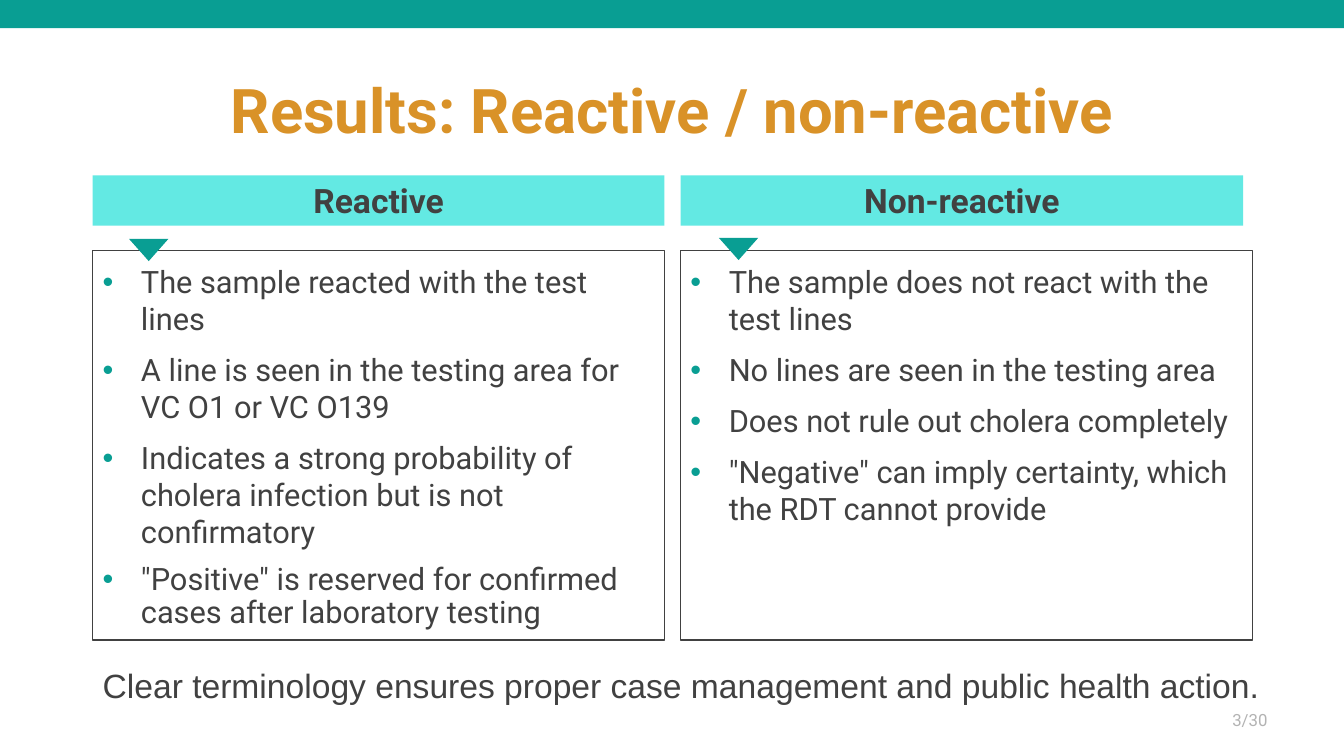
from dataclasses import dataclass

from lxml.etree import SubElement
from pptx import Presentation
from pptx.dml.color import RGBColor
from pptx.enum.shapes import MSO_SHAPE
from pptx.enum.text import MSO_ANCHOR, PP_ALIGN
from pptx.oxml.ns import qn
from pptx.util import Inches, Pt


@dataclass(frozen=True)
class Theme:
    teal: str = "099E93"
    aqua: str = "63E9E3"
    orange: str = "D99228"
    ink: str = "414141"
    grey: str = "B3B3B3"
    font: str = "Roboto"
    closing_font: str = "Arial"
    title_size: int = 44
    heading_size: int = 24
    body_size: int = 22
    number_size: int = 12


THEME = Theme()
BULLET_INDENT = 0.38
REACTIVE = [
    "The sample reacted with the test lines",
    "A line is seen in the testing area for VC O1 or VC O139",
    "Indicates a strong probability of cholera infection but is not confirmatory",
    '"Positive" is reserved for confirmed cases after laboratory testing',
]
NON_REACTIVE = [
    "The sample does not react with the test lines",
    "No lines are seen in the testing area",
    "Does not rule out cholera completely",
    '"Negative" can imply certainty, which the RDT cannot provide',
]


def add_bullet(paragraph):
    properties = paragraph._p.get_or_add_pPr()
    properties.set("marL", str(Inches(BULLET_INDENT)))
    properties.set("indent", str(-Inches(BULLET_INDENT)))
    color = SubElement(properties, qn("a:buClr"))
    SubElement(color, qn("a:srgbClr"), val=THEME.teal)
    SubElement(properties, qn("a:buFont"), typeface="Arial")
    SubElement(properties, qn("a:buChar"), char="•")


def write(paragraph, text, *, size, color=THEME.ink, font=THEME.font,
          bold=False, align=PP_ALIGN.LEFT, bullet=False, before=0, spacing=None):
    if bullet:
        add_bullet(paragraph)
    paragraph.alignment = align
    if before:
        paragraph.space_before = Pt(before)
    if spacing:
        paragraph.line_spacing = spacing
    run = paragraph.add_run()
    run.text = text
    run.font.name = font
    run.font.size = Pt(size)
    run.font.bold = bold
    run.font.color.rgb = RGBColor.from_string(color)


def add_block(slide, kind, box, fill=None, line=None):
    block = slide.shapes.add_shape(kind, *map(Inches, box))
    block.shadow.inherit = False
    if fill:
        block.fill.solid()
        block.fill.fore_color.rgb = RGBColor.from_string(fill)
    else:
        block.fill.background()
    if line:
        block.line.color.rgb = RGBColor.from_string(line)
        block.line.width = Pt(0.75)
    else:
        block.line.fill.background()
    return block


def add_label(slide, box, text, anchor=MSO_ANCHOR.TOP, **style):
    frame = slide.shapes.add_textbox(*map(Inches, box)).text_frame
    frame.word_wrap = True
    frame.vertical_anchor = anchor
    write(frame.paragraphs[0], text, **style)


def add_findings(slide, left, findings, last_spacing):
    panel = add_block(slide, MSO_SHAPE.RECTANGLE, (left, 2.49, 5.67, 3.86),
                      line=THEME.ink)
    frame = panel.text_frame
    frame.word_wrap = True
    frame.vertical_anchor = MSO_ANCHOR.TOP
    frame.margin_top = Inches(0.12)
    for index, finding in enumerate(findings):
        paragraph = frame.add_paragraph() if index else frame.paragraphs[0]
        is_last = index == len(findings) - 1
        write(paragraph, finding, size=THEME.body_size, bullet=True,
              before=10 if index else 0,
              spacing=last_spacing if is_last else None)


def add_result(slide, left, heading, heading_width, findings, pointer_at,
               last_spacing=None):
    add_findings(slide, left, findings, last_spacing)
    pointer = add_block(slide, MSO_SHAPE.ISOSCELES_TRIANGLE,
                        (*pointer_at, 0.39, 0.22), fill=THEME.teal)
    pointer.rotation = 180
    header = add_block(slide, MSO_SHAPE.RECTANGLE,
                       (left, 1.74, heading_width, 0.5), fill=THEME.aqua)
    header.text_frame.vertical_anchor = MSO_ANCHOR.TOP
    write(header.text_frame.paragraphs[0], heading, size=THEME.heading_size,
          bold=True, align=PP_ALIGN.CENTER)


def main():
    deck = Presentation()
    deck.slide_width, deck.slide_height = Inches(13.33), Inches(7.5)
    slide = deck.slides.add_slide(deck.slide_layouts[6])

    # Top band and title
    add_block(slide, MSO_SHAPE.RECTANGLE, (0, 0, 13.33, 0.28), fill=THEME.teal)
    add_label(slide, (0.92, 0.4, 11.5, 1.45), "Results: Reactive / non-reactive",
              anchor=MSO_ANCHOR.MIDDLE, size=THEME.title_size, color=THEME.orange,
              bold=True, align=PP_ALIGN.CENTER, spacing=0.9)

    # The two results side by side
    add_result(slide, 0.92, "Reactive", 5.67, REACTIVE, (1.28, 2.37),
               last_spacing=0.9)
    add_result(slide, 6.75, "Non-reactive", 5.58, NON_REACTIVE, (7.13, 2.36))

    # Closing message and page number
    add_label(slide, (0.92, 6.55, 11.77, 0.5),
              "Clear terminology ensures proper case management and public health action.",
              size=THEME.heading_size, font=THEME.closing_font)
    add_label(slide, (9.67, 6.95, 3, 0.4), "3/30", anchor=MSO_ANCHOR.MIDDLE,
              size=THEME.number_size, color=THEME.grey, align=PP_ALIGN.RIGHT,
              spacing=0.9)

    deck.save("out.pptx")


if __name__ == "__main__":
    main()
